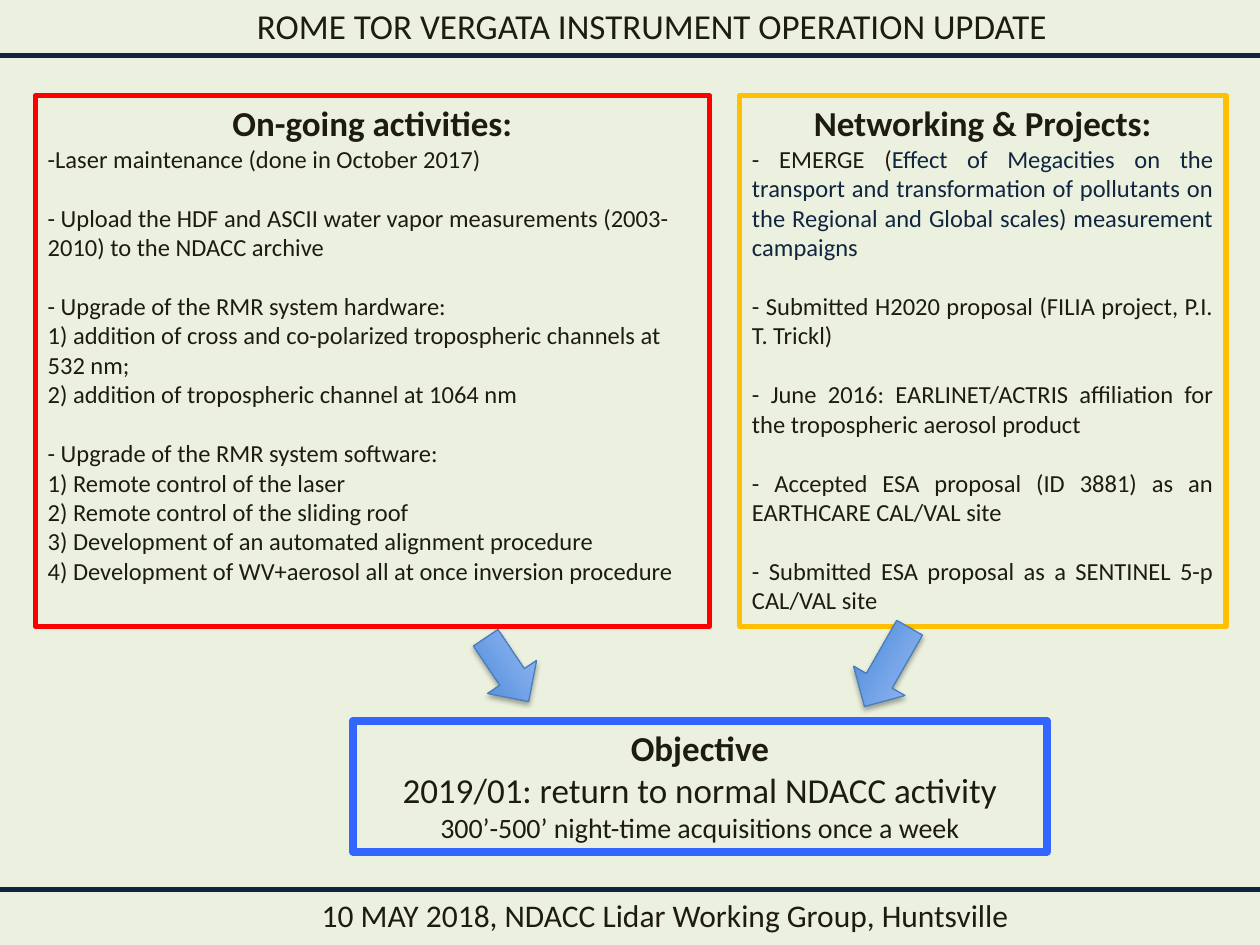
from lxml import etree
from pptx import Presentation
from pptx.dml.color import RGBColor
from pptx.enum.shapes import MSO_CONNECTOR, MSO_SHAPE
from pptx.enum.text import MSO_ANCHOR, PP_ALIGN
from pptx.oxml.ns import qn
from pptx.util import Inches, Pt

RECTANGLE, ARROW = MSO_SHAPE.RECTANGLE, MSO_SHAPE.RIGHT_ARROW
STRAIGHT = MSO_CONNECTOR.STRAIGHT
TOP, MIDDLE = MSO_ANCHOR.TOP, MSO_ANCHOR.MIDDLE
LEFT, CENTER, JUSTIFY = PP_ALIGN.LEFT, PP_ALIGN.CENTER, PP_ALIGN.JUSTIFY

THEME = {
    "font": "Calibri",
    "background": "EBF1DE", "ink": "1E1C11", "project": "10253F", "rule": "0F243E",
    "activities": "FF0000", "networking": "FFC000", "objective": "3366FF",
    "arrow_start": "3F80CE", "arrow_end": "A4C4FF", "arrow_edge": "4B7EBC",
    "shadow": "000000",
    "heading": 20, "footer": 18, "note": 16, "body": 14, "group_gap": 16.8,
}

TITLE = "ROME TOR VERGATA INSTRUMENT OPERATION UPDATE"
FOOTER = "10 MAY 2018, NDACC Lidar Working Group, Huntsville"
ACTIVITIES = [
    ["-Laser maintenance (done in October 2017)"],
    ["- Upload the HDF and ASCII water vapor measurements (2003-2010) to the NDACC archive"],
    ["- Upgrade of the RMR system hardware:",
     "1) addition of cross and co-polarized tropospheric channels at 532 nm;",
     "2) addition of tropospheric channel at 1064 nm"],
    ["- Upgrade of the RMR system software:",
     "1) Remote control of the laser",
     "2) Remote control of the sliding roof",
     "3) Development of an automated alignment procedure",
     "4) Development of WV+aerosol all at once inversion procedure"],
]
PROJECTS = [
    [[("- EMERGE (", "ink"),
      ("Effect of Megacities on the transport and transformation of pollutants on "
       "the Regional and Global scales) measurement campaigns", "project")]],
    ["- Submitted H2020 proposal (FILIA project, P.I. T. Trickl)"],
    ["- June 2016: EARLINET/ACTRIS affiliation for the tropospheric aerosol product"],
    ["- Accepted ESA proposal (ID 3881) as an EARTHCARE CAL/VAL site"],
    ["- Submitted ESA proposal as a SENTINEL 5-p CAL/VAL site"],
]
OBJECTIVE = [
    ("2019/01: return to normal NDACC activity", "heading"),
    ("300’-500’ night-time acquisitions once a week", "note"),
]
RULES = [0.44, 7.06]
ARROWS = [((3.72, 5.08, 0.61, 0.47), 56), ((6.68, 5.06, 0.72, 0.47), 119.8)]


def color(name):
    return RGBColor.from_string(THEME[name])


def line(text, size, align=CENTER, bold=False, gap=0):
    return {"text": text, "size": size, "align": align, "bold": bold, "gap": gap}


def grouped(groups, align):
    return [line(text, "body", align,
                 gap=THEME["group_gap"] if group_index and not text_index else 0)
            for group_index, group in enumerate(groups)
            for text_index, text in enumerate(group)]


def write(shape, lines, anchor=TOP):
    frame = shape.text_frame
    frame.word_wrap = True
    frame.vertical_anchor = anchor
    for index, item in enumerate(lines):
        para = frame.add_paragraph() if index else frame.paragraphs[0]
        para.alignment = item["align"]
        para.space_before = Pt(item["gap"])
        text = item["text"]
        for words, ink in [(text, "ink")] if isinstance(text, str) else text:
            span = para.add_run()
            span.text = words
            span.font.color.rgb = color(ink)
            formats = {"name": THEME["font"], "size": Pt(THEME[item["size"]]),
                       "bold": item["bold"]}
            for attribute, value in formats.items():
                setattr(span.font, attribute, value)


def add_shape(page, kind, place, edge, weight):
    shape = page.shapes.add_shape(kind, *map(Inches, place))
    shape.shadow.inherit = False
    shape.line.color.rgb = color(edge)
    shape.line.width = Pt(weight)
    return shape


def add_panel(page, place, edge, weight, heading, lines):
    box = add_shape(page, RECTANGLE, place, edge, weight)
    box.fill.background()
    write(box, [line(heading, "heading", bold=True)] + lines)


def add_caption(page, place, text, size, anchor=TOP):
    box = page.shapes.add_textbox(*map(Inches, place))
    write(box, [line(text, size)], anchor)


def add_rule(page, top):
    rule = page.shapes.add_connector(STRAIGHT, 0, Inches(top), Inches(10), Inches(top))
    rule.line.color.rgb = color("rule")
    rule.line.width = Pt(3)
    etree.SubElement(rule._element.spPr, qn("a:effectLst"))


def add_arrow(page, place, angle):
    arrow = add_shape(page, ARROW, place, "arrow_edge", 0.75)
    arrow.rotation = angle
    arrow.fill.gradient()
    arrow.fill.gradient_angle = 90
    for stop, name in zip(arrow.fill.gradient_stops, ("arrow_start", "arrow_end")):
        stop.color.rgb = color(name)
    effects = arrow._element.spPr.find(qn("a:effectLst"))
    shadow = etree.SubElement(effects, qn("a:outerShdw"), blurRad=str(Pt(3.1)),
                              dist=str(Pt(1.8)), dir="5400000", rotWithShape="0")
    tint = etree.SubElement(shadow, qn("a:srgbClr"), val=THEME["shadow"])
    etree.SubElement(tint, qn("a:alpha"), val="35000")


def main():
    deck = Presentation()
    deck.slide_width, deck.slide_height = Inches(10), Inches(7.5)
    page = deck.slides.add_slide(deck.slide_layouts[6])
    page.background.fill.solid()
    page.background.fill.fore_color.rgb = color("background")

    add_panel(page, (0.28, 0.76, 5.35, 4.21), "activities", 3,
              "On-going activities:", grouped(ACTIVITIES, LEFT))
    add_panel(page, (2.8, 5.72, 5.51, 1.04), "objective", 4.5,
              "Objective", [line(text, size) for text, size in OBJECTIVE])
    add_caption(page, (1.38, 7.06, 7.8, 0.41), FOOTER, "footer")
    for top in RULES:
        add_rule(page, top)
    add_caption(page, (0.87, -0.11, 8.61, 0.62), TITLE, "heading", MIDDLE)
    add_panel(page, (5.87, 0.76, 3.86, 4.21), "networking", 3,
              "Networking & Projects:", grouped(PROJECTS, JUSTIFY))
    for place, angle in ARROWS:
        add_arrow(page, place, angle)
    deck.save("out.pptx")


if __name__ == "__main__":
    main()
